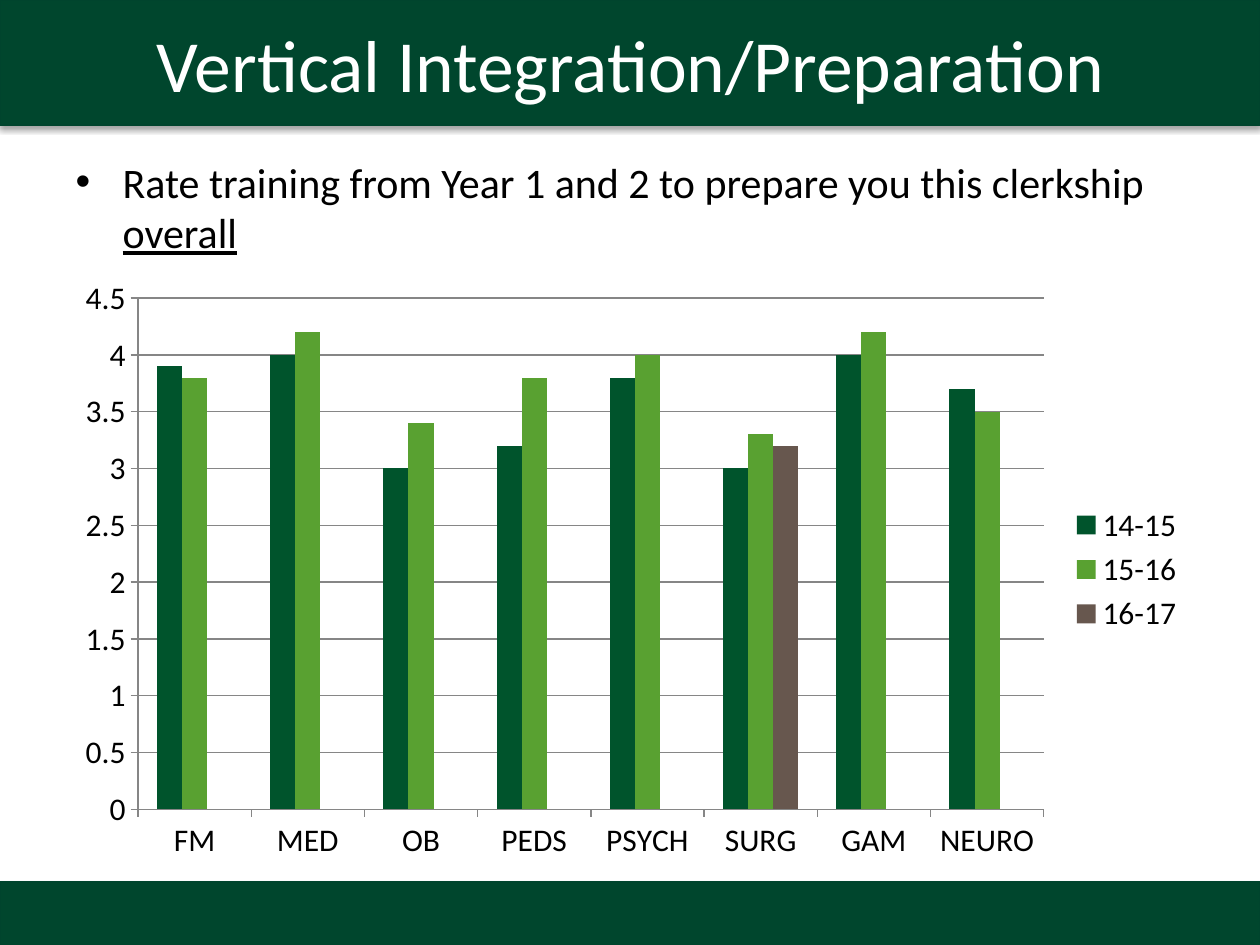
from lxml import etree
from pptx import Presentation, util as u
from pptx.chart.data import CategoryChartData
from pptx.dml.color import RGBColor
from pptx.enum import chart as charts, shapes, text
from pptx.oxml.ns import qn

FONT = "Calibri"
COLOURS = {
    "band": "00462D", "band_edge": "00442D", "title": "FFFFFF", "text": "000000",
    "axis": "868686", "14-15": "00542C", "15-16": "59A131", "16-17": "67574E",
}
CLERKSHIPS = ["FM", "MED", "OB", "PEDS", "PSYCH", "SURG", "GAM", "NEURO"]
RATINGS = {
    "14-15": [3.9, 4, 3, 3.2, 3.8, 3, 4, 3.7],
    "15-16": [3.8, 4.2, 3.4, 3.8, 4, 3.3, 4.2, 3.5],
    "16-17": [None, None, None, None, None, 3.2, None, None],
}


def px(length):
    return u.Emu(round(length * 914400 / 126))


def colour(name):
    return RGBColor.from_string(COLOURS[name])


class SlideBuilder:
    """Holds the slide and draws each kind of element in its style."""

    def __init__(self, slide):
        self.slide = slide

    def style(self, font, size, name):
        font.name, font.size = FONT, u.Pt(size)
        font.color.rgb = colour(name)

    def band(self, top, height):
        """Full-width bar with a soft shadow, placed behind the placeholders."""
        bar = self.slide.shapes.add_shape(
            shapes.MSO_SHAPE.RECTANGLE, 0, px(top), px(1260), px(height))
        bar.fill.solid()
        bar.fill.fore_color.rgb = colour("band")
        bar.line.color.rgb = colour("band_edge")
        bar.line.width = u.Pt(0.75)
        bar.shadow.inherit = False
        effects = bar._element.spPr.find(qn("a:effectLst"))
        shadow = etree.SubElement(
            effects, qn("a:outerShdw"), blurRad=str(u.Pt(3.1)),
            dist=str(u.Pt(1.8)), dir="5400000", rotWithShape="0")
        black = etree.SubElement(shadow, qn("a:srgbClr"), val="000000")
        etree.SubElement(black, qn("a:alpha"), val="35000")
        self.slide.shapes._spTree.insert(2, bar._element)

    def placeholder(self, index, box):
        holder = self.slide.placeholders[index]
        holder.left, holder.top, holder.width, holder.height = map(px, box)
        holder.text_frame.word_wrap = True
        return holder.text_frame

    def title(self, wording, box):
        frame = self.placeholder(0, box)
        frame.vertical_anchor = text.MSO_ANCHOR.MIDDLE
        heading = frame.paragraphs[0]
        heading.alignment = text.PP_ALIGN.CENTER
        run = heading.add_run()
        run.text = wording
        self.style(run.font, 42, "title")

    def bullet(self, parts, box):
        """One bullet made of (wording, underlined) parts."""
        point = self.placeholder(1, box).paragraphs[0]
        properties = point._p.get_or_add_pPr()
        properties.set("marL", str(px(47)))
        properties.set("indent", str(px(-47)))
        etree.SubElement(properties, qn("a:buFont"), typeface="Arial")
        etree.SubElement(properties, qn("a:buChar"), char="•")
        point.space_before = u.Pt(0)
        for wording, underlined in parts:
            run = point.add_run()
            run.text = wording
            self.style(run.font, 24, "text")
            if underlined:
                run.font.underline = True

    def column_chart(self, categories, series, box):
        data = CategoryChartData()
        data.categories = categories
        for name, values in series.items():
            data.add_series(name, values)
        chart = self.slide.shapes.add_chart(
            charts.XL_CHART_TYPE.COLUMN_CLUSTERED, *map(px, box), data).chart
        self.style(chart.font, 18, "text")
        chart.has_title = False
        chart.has_legend = True
        chart.legend.position = charts.XL_LEGEND_POSITION.RIGHT
        chart.legend.include_in_layout = False

        plot = chart.plots[0]
        plot.gap_width, plot.overlap = 150, 0
        plot.vary_by_categories = False
        for column in plot.series:
            column.format.fill.solid()
            column.format.fill.fore_color.rgb = colour(column.name)
            column.invert_if_negative = False

        scale = chart.value_axis
        scale.minimum_scale, scale.maximum_scale, scale.major_unit = 0, 4.5, 0.5
        scale.has_major_gridlines = True
        for axis in (chart.category_axis, scale):
            axis.major_tick_mark = charts.XL_TICK_MARK.OUTSIDE
            axis.minor_tick_mark = charts.XL_TICK_MARK.NONE
        for part in (chart.category_axis, scale, scale.major_gridlines):
            part.format.line.color.rgb = colour("axis")
            part.format.line.width = u.Pt(0.75)


def main():
    deck = Presentation()
    deck.slide_width, deck.slide_height = px(1260), px(945)
    builder = SlideBuilder(deck.slides.add_slide(deck.slide_layouts[1]))
    builder.band(0, 125)
    builder.band(882, 63)
    builder.title("Vertical Integration/Preparation", (24, 1, 1213, 125))
    builder.bullet(
        [("Rate training from Year 1 and 2 to prepare you this clerkship ", False),
         ("overall", True)],
        (63, 150, 1134, 706))
    builder.column_chart(CLERKSHIPS, RATINGS, (63, 267, 1134, 605))
    deck.save("out.pptx")


if __name__ == "__main__":
    main()
